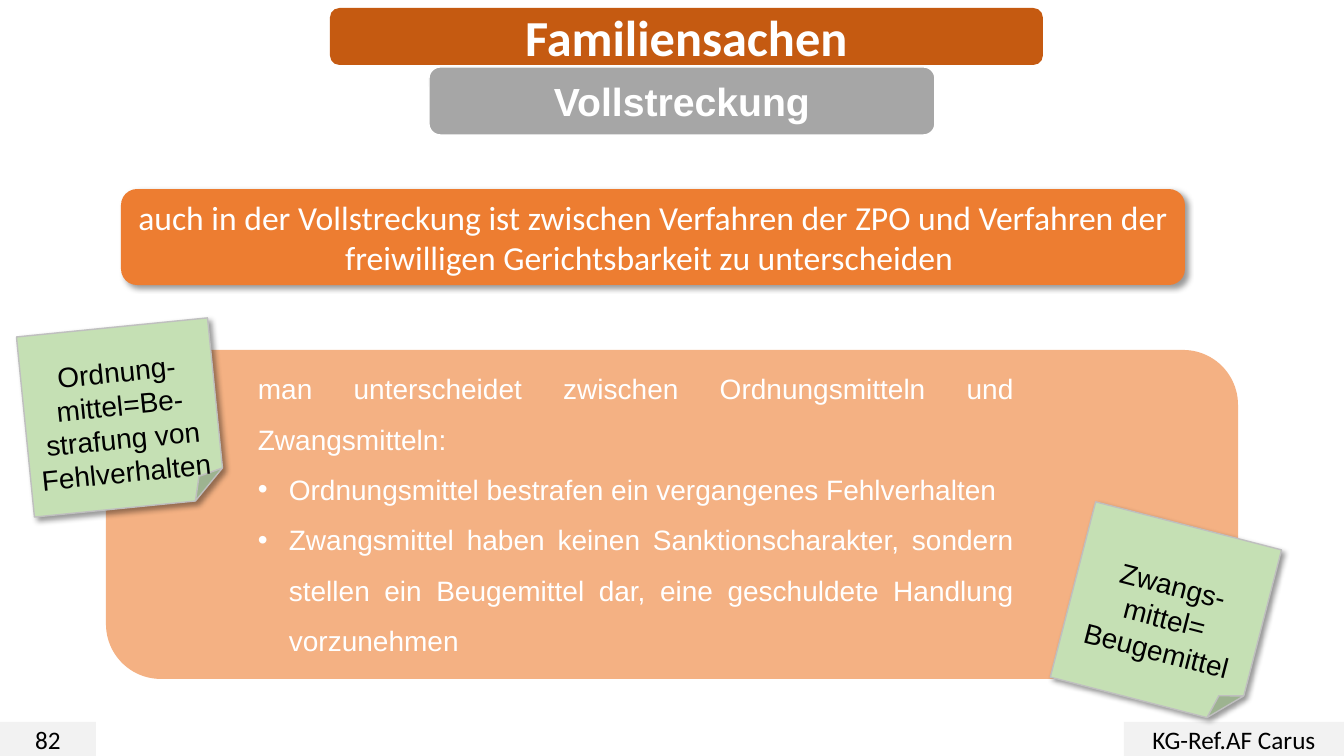
from lxml.etree import SubElement
from pptx import Presentation
from pptx.dml.color import RGBColor
from pptx.enum.shapes import MSO_SHAPE
from pptx.enum.text import MSO_ANCHOR, MSO_AUTO_SIZE, PP_ALIGN
from pptx.oxml.ns import qn
from pptx.util import Emu, Pt

EMU_PER_PX = 914400 / 100.8
COLORS = {
    "title": "C55A11", "subtitle": "A6A6A6", "statement": "ED7D31",
    "panel": "F4B183", "note": "C5E0B4", "note_edge": "BFBFBF",
    "footer": "F2F2F2", "white": "FFFFFF", "black": "000000",
}


def px(length):
    return Emu(round(length * EMU_PER_PX))


def rgb(name):
    return RGBColor.from_string(COLORS[name])


def format_paragraph(paragraph, size, font, color, bold=False, align=PP_ALIGN.CENTER):
    paragraph.alignment = align
    for run in paragraph.runs:
        run.font.size = Pt(size)
        run.font.name = font
        run.font.bold = bold
        run.font.color.rgb = rgb(color)


def add_shadow(shape):
    effects = shape._element.spPr.find(qn("a:effectLst"))
    shadow = SubElement(effects, qn("a:outerShdw"), blurRad=str(Pt(4)),
                        dist=str(Pt(3)), dir=str(45 * 60000),
                        algn="tl", rotWithShape="0")
    tint = SubElement(shadow, qn("a:srgbClr"), val=COLORS["black"])
    SubElement(tint, qn("a:alpha"), val="40000")


def add_box(shapes, kind, place, fill, edge=None):
    box = shapes.add_shape(kind, *map(px, place))
    box.shadow.inherit = False
    box.fill.solid()
    box.fill.fore_color.rgb = rgb(fill)
    if edge:
        box.line.color.rgb = rgb(edge)
        box.line.width = Pt(1)
    else:
        box.line.fill.background()
    return box


def add_label(shapes, kind, place, fill, text, size, font, color, bold=False, edge=None):
    label = add_box(shapes, kind, place, fill, edge)
    frame = label.text_frame
    frame.word_wrap = True
    frame.vertical_anchor = MSO_ANCHOR.MIDDLE
    frame.text = text
    format_paragraph(frame.paragraphs[0], size, font, color, bold)
    return label


def add_note(shapes, place, rotation, text):
    note = add_label(shapes, MSO_SHAPE.FOLDED_CORNER, place, "note", text,
                     20, "Arial", "black", edge="note_edge")
    note.rotation = rotation
    note.text_frame.margin_top = px(43)
    add_shadow(note)


def add_bullet(paragraph):
    properties = paragraph._p.get_or_add_pPr()
    properties.set("marL", str(px(31)))
    properties.set("indent", str(-px(31)))
    SubElement(properties, qn("a:buFont"), typeface="Arial")
    SubElement(properties, qn("a:buChar"), char="•")


def add_explanation(shapes, place, intro, points):
    explanation = shapes.add_textbox(*map(px, place))
    frame = explanation.text_frame
    frame.word_wrap = True
    frame.auto_size = MSO_AUTO_SIZE.SHAPE_TO_FIT_TEXT
    frame.text = "\n".join([intro, *points])
    for paragraph in frame.paragraphs:
        format_paragraph(paragraph, 20, "Arial", "white", align=PP_ALIGN.JUSTIFY)
        paragraph.line_spacing = 1.5
    for paragraph in frame.paragraphs[1:]:
        add_bullet(paragraph)


def main():
    presentation = Presentation()
    presentation.slide_width, presentation.slide_height = px(1344), px(756)
    slide = presentation.slides.add_slide(presentation.slide_layouts[6])
    shapes = slide.shapes
    rounded = MSO_SHAPE.ROUNDED_RECTANGLE

    # Title and footer
    add_label(shapes, rounded, (330, 8, 713, 57), "title",
              "Familiensachen", 36, "Calibri", "white", bold=True)
    for place, text in (((0, 722, 96, 34), "82"),
                        ((1124, 722, 220, 34), "KG-Ref.AF Carus")):
        add_label(shapes, MSO_SHAPE.RECTANGLE, place, "footer",
                  text, 18, "Calibri", "black")

    # Subtitle
    add_label(shapes, rounded, (429, 67, 506, 68), "subtitle",
              "Vollstreckung", 28, "Arial", "white", bold=True, edge="white")

    # Statement and explanation
    content = shapes.add_group_shape().shapes
    add_box(content, rounded, (106, 350, 1132, 329), "panel")
    statement = add_label(
        content, rounded, (121, 189, 1064, 96), "statement",
        "auch in der Vollstreckung ist zwischen Verfahren der ZPO und "
        "Verfahren der freiwilligen Gerichtsbarkeit zu unterscheiden ",
        24, "Calibri", "white")
    add_shadow(statement)
    add_explanation(
        content, (248, 350, 776, 309),
        "man unterscheidet zwischen Ordnungsmitteln und Zwangsmitteln: ",
        ["Ordnungsmittel bestrafen ein vergangenes Fehlverhalten ",
         "Zwangsmittel haben keinen Sanktionscharakter, sondern stellen ein "
         "Beugemittel dar, eine geschuldete Handlung vorzunehmen"])

    # Sticky notes
    add_note(shapes, (25, 327, 192, 181), 354.3,
             "Ordnung-mittel=Be-strafung von Fehlverhalten")
    add_note(shapes, (1070, 523, 192, 181), 14.5,
             "Zwangs-mittel= Beugemittel")

    presentation.save("out.pptx")


if __name__ == "__main__":
    main()
